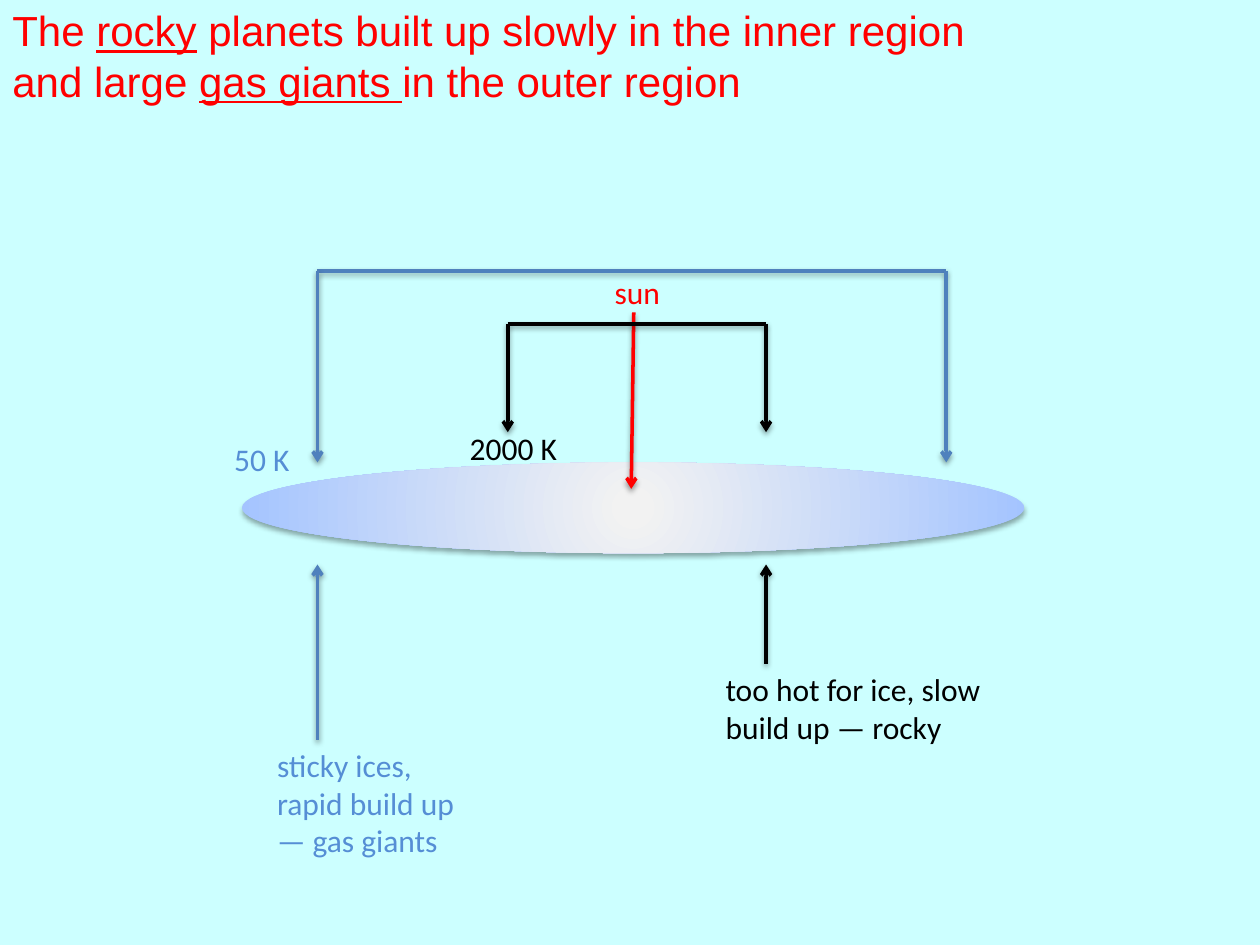
from dataclasses import dataclass

from lxml import etree
from pptx import Presentation
from pptx import util as u
from pptx.dml.color import RGBColor
from pptx.enum import shapes, text
from pptx.oxml import parse_xml
from pptx.oxml.ns import nsdecls, qn

COLUMNS, ROWS = 100, 75
CELL = u.Inches(0.1)


@dataclass(frozen=True)
class Theme:
    background: str = "CCFFFF"
    red: str = "FF0000"
    black: str = "000000"
    blue_line: str = "4F81BD"
    blue_text: str = "558ED5"
    disk_centre: str = "F2F2F2"
    disk_edge: str = "A4C4FF"
    title_font: str = "Arial"
    label_font: str = "Calibri"
    title_size: int = 24
    label_size: int = 18
    line_width: int = 2


THEME = Theme()


@dataclass(frozen=True)
class Box:
    column: float
    row: float
    columns: float
    rows: float

    def inner(self, column, row, columns, rows):
        return Box(self.column + column, self.row + row, columns, rows)

    def point(self, column, row):
        return round((self.column + column) * CELL), round((self.row + row) * CELL)

    def lengths(self):
        return *self.point(0, 0), round(self.columns * CELL), round(self.rows * CELL)


def shadow(opacity, blur, distance, degrees=90):
    return parse_xml(
        f'<a:effectLst {nsdecls("a")}><a:outerShdw blurRad="{u.Pt(blur)}" '
        f'dist="{u.Pt(distance)}" dir="{degrees * 60000}" algn="tl" rotWithShape="0">'
        f'<a:srgbClr val="{THEME.black}"><a:alpha val="{opacity * 1000}"/>'
        "</a:srgbClr></a:outerShdw></a:effectLst>"
    )


def add_text_box(slide, box, wrap=True):
    frame = slide.shapes.add_textbox(*box.lengths()).text_frame
    frame.word_wrap = wrap
    frame.auto_size = text.MSO_AUTO_SIZE.SHAPE_TO_FIT_TEXT
    return frame


def style(paragraph, font, size, color):
    paragraph.font.name = font
    paragraph.font.size = u.Pt(size)
    paragraph.font.color.rgb = RGBColor.from_string(color)


def add_label(slide, box, words, color, wrap=True):
    paragraph = add_text_box(slide, box, wrap).paragraphs[0]
    paragraph.text = words
    style(paragraph, THEME.label_font, THEME.label_size, color)


def add_line(slide, start, end, color, arrow=True):
    line = slide.shapes.add_connector(shapes.MSO_CONNECTOR.STRAIGHT, *start, *end)
    line.line.color.rgb = RGBColor.from_string(color)
    line.line.width = u.Pt(THEME.line_width)
    if arrow:
        outline = line.line._get_or_add_ln()
        etree.SubElement(outline, qn("a:tailEnd"), type="arrow")
    line._element.spPr.append(shadow(38, 3.1, 1.6))


def add_title(slide, box):
    lines = [
        [("The ", False), ("rocky", True),
         (" planets built up slowly in the inner region", False)],
        [("and large ", False), ("gas giants ", True),
         ("in the outer region", False)],
    ]
    frame = add_text_box(slide, box)
    for index, pieces in enumerate(lines):
        paragraph = frame.add_paragraph() if index else frame.paragraphs[0]
        style(paragraph, THEME.title_font, THEME.title_size, THEME.red)
        for words, underlined in pieces:
            run = paragraph.add_run()
            run.text = words
            if underlined:
                run.font.underline = True
            run._r.get_or_add_rPr().append(shadow(43, 3, 3, 45))


def add_disk(slide, box):
    disk = slide.shapes.add_shape(shapes.MSO_SHAPE.OVAL, *box.lengths())
    disk.line.fill.background()
    properties = disk._element.spPr
    properties.insert(2, parse_xml(
        f'<a:gradFill {nsdecls("a")} rotWithShape="1"><a:gsLst>'
        f'<a:gs pos="3000"><a:srgbClr val="{THEME.disk_centre}"/></a:gs>'
        f'<a:gs pos="100000"><a:srgbClr val="{THEME.disk_edge}"/></a:gs></a:gsLst>'
        '<a:path path="circle"><a:fillToRect l="50000" t="50000" r="50000" b="50000"/>'
        "</a:path></a:gradFill>"
    ))
    properties.append(shadow(35, 3.1, 1.8))


def add_bracket(slide, box, color):
    add_line(slide, box.point(0, 0), box.point(box.columns, 0), color, arrow=False)
    for column in (0, box.columns):
        add_line(slide, box.point(column, 0), box.point(column, box.rows), color)


def add_diagram(slide, box):
    add_disk(slide, box.inner(2.2, 15.7, 62.1, 7.2))
    add_line(slide, box.point(33.3, 3.8), box.point(33.1, 17.8), THEME.red)
    add_label(slide, box.inner(30.8, 0.2, 5.7, 4), "sun", THEME.red, wrap=False)
    add_bracket(slide, box.inner(23.3, 4.7, 20.5, 8.6), THEME.black)
    add_label(slide, box.inner(19.3, 12.6, 15.3, 4), "2000 K", THEME.black)
    add_bracket(slide, box.inner(8.2, 0.5, 49.9, 15.2), THEME.blue_line)
    add_label(slide, box.inner(0.6, 13.4, 15.3, 4), "50 K", THEME.blue_text)


def add_note(slide, box, arrow_rows, words, line_color, text_color):
    add_line(slide, box.point(4.2, arrow_rows), box.point(4.2, 0), line_color)
    label_box = box.inner(0, arrow_rows, box.columns, box.rows - arrow_rows)
    add_label(slide, label_box, words, text_color)


def main():
    presentation = Presentation()
    presentation.slide_width = COLUMNS * CELL
    presentation.slide_height = ROWS * CELL
    slide = presentation.slides.add_slide(presentation.slide_layouts[6])
    slide.background.fill.solid()
    slide.background.fill.fore_color.rgb = RGBColor.from_string(THEME.background)

    add_title(slide, Box(0, -0.1, 90.7, 9.1))
    add_diagram(slide, Box(17, 21, 65, 23))
    add_note(slide, Box(21, 44.8, 16.8, 24), 13.9,
             "sticky ices, rapid build up — gas giants",
             THEME.blue_line, THEME.blue_text)
    add_note(slide, Box(56.6, 44.8, 23.2, 15), 7.9,
             "too hot for ice, slow build up — rocky",
             THEME.black, THEME.black)
    presentation.save("out.pptx")


if __name__ == "__main__":
    main()
